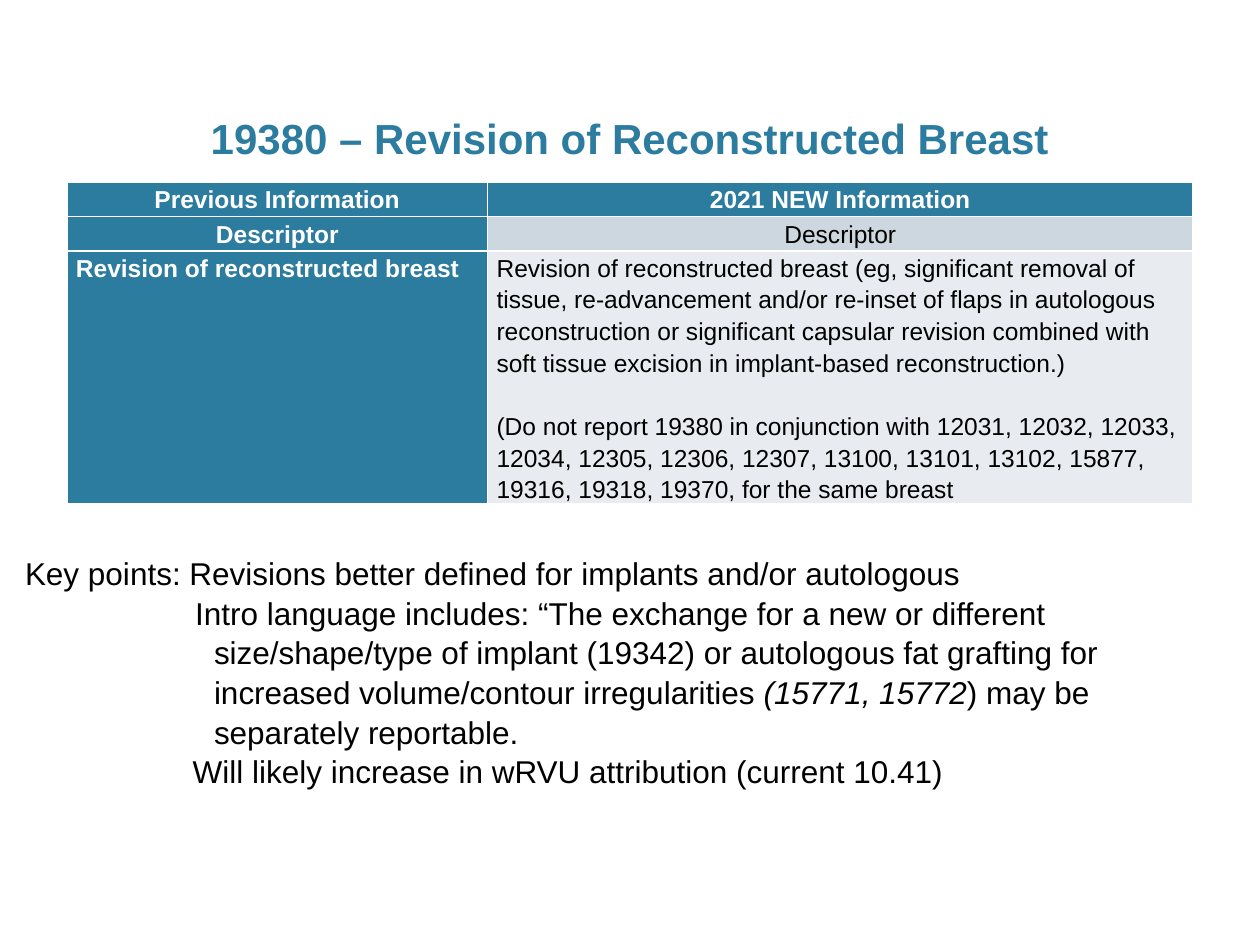
"""Build the slide on code 19380, revision of a reconstructed breast."""
from pptx import Presentation
from pptx.dml.color import RGBColor
from pptx.enum.text import MSO_ANCHOR, MSO_AUTO_SIZE, PP_ALIGN
from pptx.oxml.xmlchemy import OxmlElement
from pptx.util import Cm, Pt

TEAL = RGBColor(0x2C, 0x7C, 0x9F)
WHITE = RGBColor(0xFF, 0xFF, 0xFF)
BLACK = RGBColor(0, 0, 0)
BLUE_GREY = RGBColor(0xCD, 0xD7, 0xDF)
PALE_GREY = RGBColor(0xE8, 0xEC, 0xF0)

TITLE = "19380 – Revision of Reconstructed Breast"
ROWS = [
    ("Previous Information", "2021 NEW Information"),
    ("Descriptor", "Descriptor"),
    (
        "Revision of reconstructed breast",
        "Revision of reconstructed breast (eg, significant removal of tissue, "
        "re-advancement and/or re-inset of flaps in autologous reconstruction or "
        "significant capsular revision combined with soft tissue excision in "
        "implant-based reconstruction.)\n"
        "(Do not report 19380 in conjunction with 12031, 12032, 12033, 12034, 12305, "
        "12306, 12307, 13100, 13101, 13102, 15877, 19316, 19318, 19370, for the same breast",
    ),
]
COLUMN_WIDTHS = [Cm(8.48), Cm(14.22)]
ROW_HEIGHTS = [Cm(0.69), Cm(0.69), Cm(4.9)]
ROW_FILLS = [TEAL, BLUE_GREY, PALE_GREY]
KEY_POINTS = [
    (Cm(0), Cm(0), ["Key points: Revisions better defined for implants and/or autologous"]),
    (
        Cm(3.81),
        Cm(-0.38),
        [
            "Intro language includes: “The exchange for a new or different "
            "size/shape/type of implant (19342) or autologous fat grafting for "
            "increased volume/contour irregularities ",
            "(15771, 15772",
            ") may be separately reportable.",
        ],
    ),
    (Cm(3.38), Cm(0), ["Will likely increase in wRVU attribution (current 10.41)"]),
]


def place(shape, left, top, width, height):
    shape.left, shape.top, shape.width, shape.height = left, top, width, height
    shape.text_frame.word_wrap = True
    shape.text_frame.auto_size = MSO_AUTO_SIZE.NONE


def format_font(font, size, color, bold=False):
    font.name, font.size, font.bold = "Arial", Pt(size), bold
    font.color.rgb = color


def add_title(slide):
    title = slide.shapes.title
    place(title, Cm(1.52), Cm(0.84), Cm(22.35), Cm(2.57))
    title.text_frame.text = TITLE
    title.text_frame.vertical_anchor = MSO_ANCHOR.BOTTOM
    paragraph = title.text_frame.paragraphs[0]
    paragraph.alignment = PP_ALIGN.CENTER
    format_font(paragraph.runs[0].font, 24, TEAL, True)


def add_code_table(slide):
    table = slide.shapes.add_table(
        len(ROWS), len(COLUMN_WIDTHS), Cm(1.35), Cm(3.68), sum(COLUMN_WIDTHS), sum(ROW_HEIGHTS)
    ).table
    for column, width in zip(table.columns, COLUMN_WIDTHS):
        column.width = width
    for row_index, texts in enumerate(ROWS):
        table.rows[row_index].height = ROW_HEIGHTS[row_index]
        for column_index, text in enumerate(texts):
            heading = row_index == 0 or column_index == 0
            cell = table.cell(row_index, column_index)
            cell.margin_left = cell.margin_right = Cm(0.18)
            cell.margin_top = cell.margin_bottom = Cm(0)
            cell.fill.solid()
            cell.fill.fore_color.rgb = TEAL if heading else ROW_FILLS[row_index]
            cell.text_frame.text = text
            for index, paragraph in enumerate(cell.text_frame.paragraphs):
                paragraph.line_spacing = 1.15
                paragraph.space_before = Pt(18 if index else 0)
                paragraph.alignment = PP_ALIGN.CENTER if row_index < 2 else PP_ALIGN.LEFT
                format_font(paragraph.runs[0].font, 14, WHITE if heading else BLACK, heading)


def add_key_points(slide):
    body = slide.placeholders[1]
    place(body, Cm(0.25), Cm(11), Cm(24.87), Cm(5.64))
    text_frame = body.text_frame
    for index, (margin, indent, texts) in enumerate(KEY_POINTS):
        paragraph = text_frame.add_paragraph() if index else text_frame.paragraphs[0]
        paragraph.line_spacing = 1.05
        paragraph.space_before = Pt(0)
        properties = paragraph._p.get_or_add_pPr()
        properties.set("marL", str(margin))
        properties.set("marR", str(Cm(0.5)))
        properties.set("indent", str(indent))
        properties.append(OxmlElement("a:buNone"))
        for run_index, text in enumerate(texts):
            run = paragraph.add_run()
            run.text = text
            format_font(run.font, 18, BLACK)
            run.font.italic = run_index == 1


def main():
    presentation = Presentation()
    presentation.slide_width, presentation.slide_height = Cm(25.4), Cm(19.05)
    slide = presentation.slides.add_slide(presentation.slide_layouts[1])
    add_key_points(slide)
    add_title(slide)
    add_code_table(slide)
    presentation.save("out.pptx")


if __name__ == "__main__":
    main()
